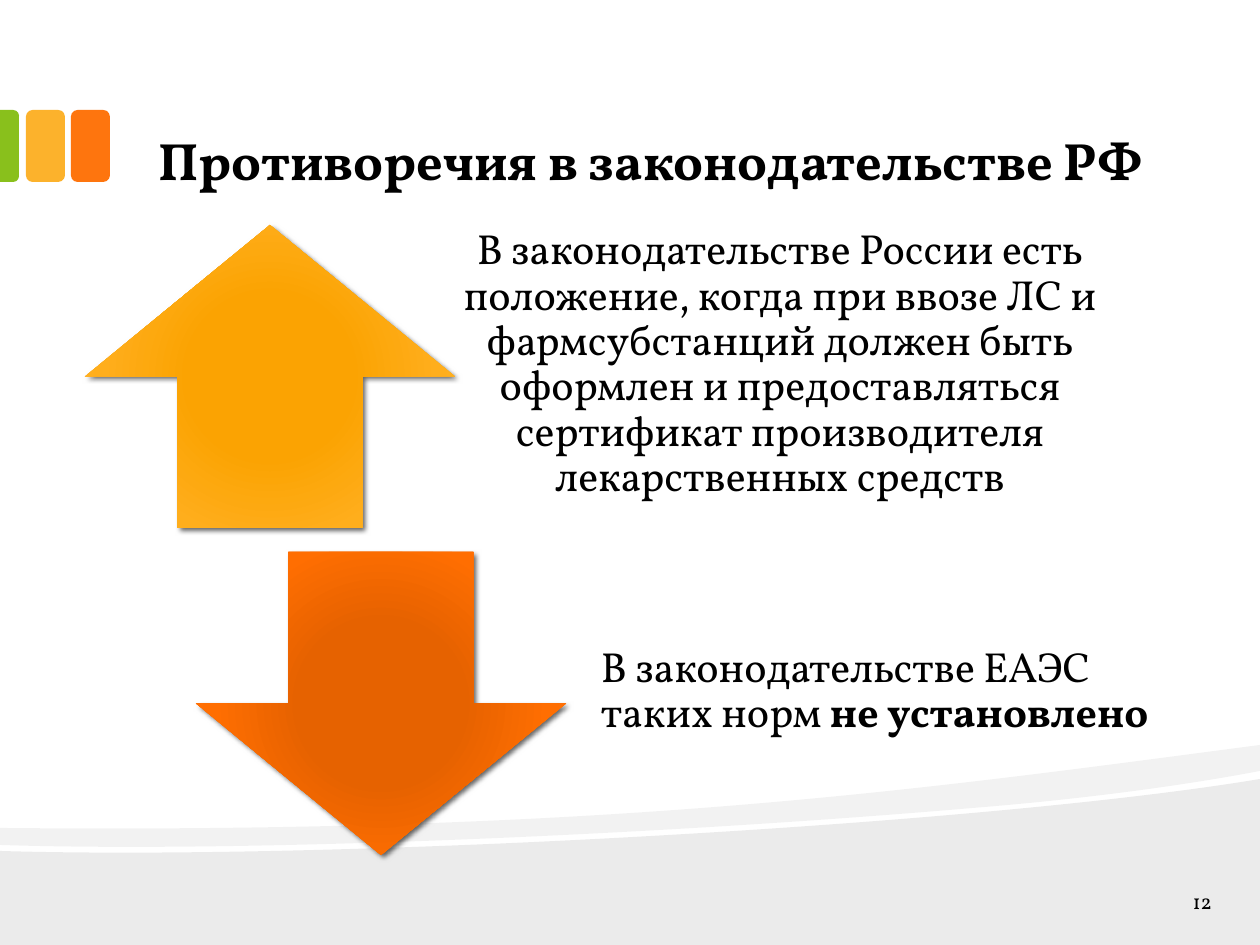
from dataclasses import dataclass

from lxml import etree
from pptx import Presentation
from pptx.dml.color import RGBColor
from pptx.enum.shapes import MSO_SHAPE
from pptx.enum.text import MSO_ANCHOR, PP_ALIGN
from pptx.oxml import parse_xml
from pptx.oxml.ns import nsdecls, qn
from pptx.util import Pt

ROUND, ROUND_TOP = MSO_SHAPE.ROUNDED_RECTANGLE, MSO_SHAPE.ROUND_2_SAME_RECTANGLE
UP, DOWN = MSO_SHAPE.UP_ARROW, MSO_SHAPE.DOWN_ARROW
LEFT, CENTER, RIGHT = PP_ALIGN.LEFT, PP_ALIGN.CENTER, PP_ALIGN.RIGHT
MIDDLE, BOTTOM = MSO_ANCHOR.MIDDLE, MSO_ANCHOR.BOTTOM

PX = 914400 / 126  # EMU per px
W, H = 1260, 945


@dataclass(frozen=True)
class Theme:
    font: str = "Vollkorn"
    ink: str = "000000"
    green: str = "89C01C"
    amber: str = "FCB22C"
    orange: str = "FE750E"
    up_stops: tuple = ((0, "FDA300"), (34, "FBA302"), (70, "FFAE1C"), (100, "FCB22C"))
    down_stops: tuple = ((0, "E66200"), (34, "E66200"), (70, "FF6E01"), (100, "FE750E"))
    title: int = 30
    body: int = 24
    number: int = 12


T = Theme()


def px(*lengths):
    return [round(n * PX) for n in lengths]


def add_text(box, runs, size=T.body, align=LEFT, anchor=MIDDLE, insets=(24, 0, 24, 24), spacing=None):
    """Add a text box; runs is a list of (text, bold)."""
    tf = s.shapes.add_textbox(*px(*box)).text_frame
    tf.word_wrap = True
    tf.vertical_anchor = anchor
    tf.margin_left, tf.margin_top, tf.margin_right, tf.margin_bottom = px(*insets)
    p = tf.paragraphs[0]
    p.alignment = align
    p.line_spacing = spacing
    for text, bold in runs:
        r = p.add_run()
        r.text = text
        r.font.name, r.font.size, r.font.bold = T.font, Pt(size), bold
        r.font.color.rgb = RGBColor.from_string(T.ink)


prs = Presentation()
prs.slide_width, prs.slide_height = px(W, H)
s = prs.slides.add_slide(prs.slide_layouts[6])

# Waves at the foot: a segment is one point (line) or three (cubic curve)
waves = [
    (8, [[(W, 779)], [(W, H)], [(0, H)], [(0, 851)], [(333, 861), (985, 825), (W, 779)]]),
    (5, [[(W, 745)], [(W, 771)],
         [(1187, 785), (1086, 799), (973, 808)], [(659, 835), (243, 853), (0, 845)],
         [(0, 828)], [(616, 834), (917, 790), (W, 745)]]),
]
for opacity, segments in waves:
    ends = [px(*seg[-1]) for seg in segments]
    builder = s.shapes.build_freeform(*ends[0], scale=1.0)
    builder.add_line_segments(ends[1:], close=True)
    sp = builder.convert_to_shape()
    for line, seg in zip(list(sp._element.iter(qn("a:lnTo"))), segments[1:]):
        if len(seg) == 3:
            curve = etree.Element(qn("a:cubicBezTo"))
            for point in seg:
                x, y = px(*point)
                etree.SubElement(curve, qn("a:pt"), x=str(x - sp.left), y=str(y - sp.top))
            line.getparent().replace(line, curve)
    sp.shadow.inherit = False
    sp.line.fill.background()
    sp.fill.solid()
    sp.fill.fore_color.rgb = RGBColor.from_string(T.ink)
    color = sp._element.spPr.find(".//" + qn("a:srgbClr"))
    etree.SubElement(color, qn("a:alpha"), val=str(opacity * 1000))

# Colour tabs beside the title
tabs = [
    (ROUND, (71, 110, 39, 72), 0, T.orange),
    (ROUND, (26, 110, 39, 72), 0, T.amber),
    (ROUND_TOP, (-27, 136, 72, 20), 90, T.green),
]
for kind, box, rotation, fill in tabs:
    sp = s.shapes.add_shape(kind, *px(*box))
    sp.shadow.inherit = False
    sp.rotation = rotation
    if kind == ROUND_TOP:
        sp.adjustments[0] = 0.29
    sp.fill.solid()
    sp.fill.fore_color.rgb = RGBColor.from_string(fill)
    sp.line.fill.background()

add_text((126, 21, 1060, 200), [("Противоречия в законодательстве РФ ", True)],
         size=T.title, align=CENTER, anchor=BOTTOM, insets=(16, 9, 16, 30))

# Opposing arrows with a radial gradient and a soft shadow
for kind, left, top, stops in ((UP, 85, 225, T.up_stops), (DOWN, 196, 552, T.down_stops)):
    sp = s.shapes.add_shape(kind, *px(left, top, 370, 303))
    sp.shadow.inherit = False
    sp.line.fill.background()
    stop_xml = "".join(f'<a:gs pos="{pos * 1000}"><a:srgbClr val="{c}"/></a:gs>' for pos, c in stops)
    gradient = parse_xml(
        f'<a:gradFill {nsdecls("a")} rotWithShape="1"><a:gsLst>{stop_xml}</a:gsLst>'
        '<a:path path="circle"><a:fillToRect l="100000" t="100000" r="100000" b="100000"/>'
        '</a:path></a:gradFill>')
    sp_pr = sp._element.spPr
    sp_pr.find(qn("a:prstGeom")).addnext(gradient)
    sp_pr.find(qn("a:effectLst")).append(parse_xml(
        f'<a:outerShdw {nsdecls("a")} blurRad="{Pt(3)}" dist="{Pt(2)}" dir="2700000" '
        f'rotWithShape="0"><a:srgbClr val="{T.ink}"><a:alpha val="60000"/></a:srgbClr></a:outerShdw>'))

add_text((424, 216, 712, 321),
         [("В законодательстве России есть положение, когда при ввозе ЛС и фармсубстанций "
           "должен быть оформлен и предоставляться сертификат производителя "
           "лекарственных средств", False)], align=CENTER, spacing=0.9)
add_text((577, 552, 627, 303),
         [("В законодательстве ЕАЭС таких норм ", False), ("не установлено", True)], spacing=0.9)
add_text((1144, 889, 84, 25), [("12", False)], size=T.number, align=RIGHT, insets=(16, 9, 16, 9))

prs.save("out.pptx")
